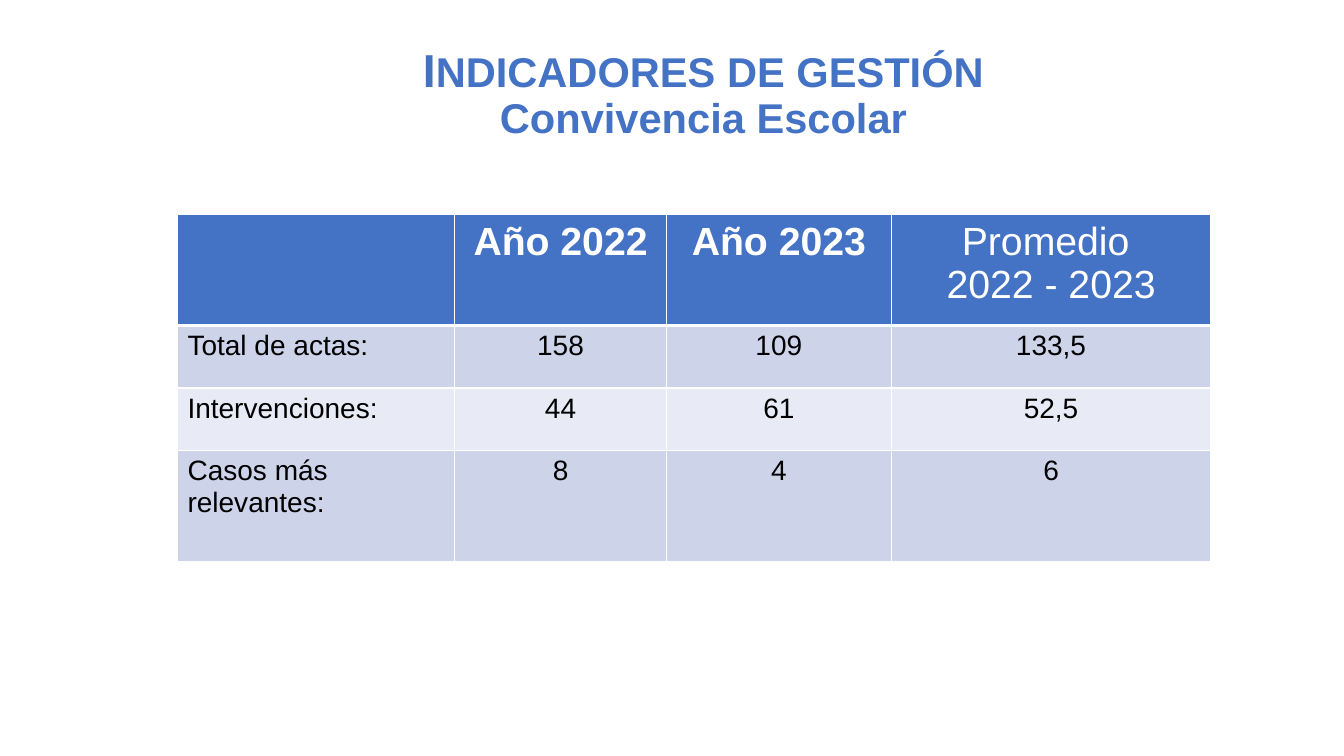
"""Build the school coexistence indicators slide with its yearly table."""
from lxml.etree import SubElement
from pptx import Presentation
from pptx.dml.color import RGBColor
from pptx.enum.text import MSO_ANCHOR, MSO_AUTO_SIZE, PP_ALIGN
from pptx.oxml.ns import qn
from pptx.util import Inches, Pt

FONT = "Arial"
COLORS = {"blue": "4472C4", "white": "FFFFFF", "black": "000000",
          "band_dark": "CDD4EA", "band_light": "E8EBF5"}

TITLE_LINES = [
    [("I", 33), ("NDICADORES DE GESTIÓN", 29.7)],
    [("Convivencia Escolar", 29.7)],
]
TITLE_BOX = (2.48, 0.17, 9, 1.29)

ROWS = [
    ["", "Año 2022", "Año 2023", "Promedio \n2022 - 2023"],
    ["Total de actas:", "158", "109", "133,5"],
    ["Intervenciones:", "44", "61", "52,5"],
    ["Casos más relevantes:", "8", "4", "6"],
]
TABLE_ORIGIN = (1.76, 2.13)
COLUMN_WIDTHS = [2.75, 2.1, 2.23, 3.17]
ROW_HEIGHTS = [1.1, 0.62, 0.62, 1.1]
BOLD_HEADERS = ROWS[0][1:3]


def add_run(paragraph, text, size, color, bold):
    run = paragraph.add_run()
    run.text = text
    run.font.name = FONT
    run.font.size = Pt(size)
    run.font.bold = bold
    run.font.color.rgb = RGBColor.from_string(COLORS[color])


def add_title(slide):
    title = slide.shapes.title
    title.left, title.top, title.width, title.height = map(Inches, TITLE_BOX)
    frame = title.text_frame
    frame.word_wrap = True
    frame.auto_size = MSO_AUTO_SIZE.NONE
    frame.vertical_anchor = MSO_ANCHOR.BOTTOM
    frame.margin_left = frame.margin_right = Inches(0.1)
    frame.margin_top = frame.margin_bottom = Inches(0.05)
    paragraph = frame.paragraphs[0]
    paragraph.alignment = PP_ALIGN.CENTER
    paragraph.line_spacing = 0.9
    for index, line in enumerate(TITLE_LINES):
        if index:
            paragraph.add_line_break()
        for text, size in line:
            add_run(paragraph, text, size, "blue", True)


def set_borders(cell, widths):
    properties = cell._tc.get_or_add_tcPr()
    for side, width in widths.items():
        line = SubElement(properties, qn(f"a:ln{side}"), w=str(Pt(width)))
        fill = SubElement(line, qn("a:solidFill"))
        SubElement(fill, qn("a:srgbClr"), val=COLORS["white"])


def fill_cell(cell, text, row, column):
    header = row == 0
    set_borders(cell, {"L": 1, "R": 1, "T": 3 if row == 1 else 1,
                       "B": 3 if header else 1})
    band = "blue" if header else "band_dark" if row % 2 else "band_light"
    cell.fill.solid()
    cell.fill.fore_color.rgb = RGBColor.from_string(COLORS[band])
    frame = cell.text_frame
    for index, line in enumerate(text.split("\n") if text else []):
        paragraph = frame.add_paragraph() if index else frame.paragraphs[0]
        paragraph.alignment = PP_ALIGN.CENTER if column else PP_ALIGN.LEFT
        add_run(paragraph, line, 28 if header else 20,
                "white" if header else "black", text in BOLD_HEADERS)


def add_indicator_table(slide):
    size = (sum(COLUMN_WIDTHS), sum(ROW_HEIGHTS))
    table = slide.shapes.add_table(
        len(ROWS), len(COLUMN_WIDTHS), *map(Inches, TABLE_ORIGIN + size)).table
    for column, width in zip(table.columns, COLUMN_WIDTHS):
        column.width = Inches(width)
    for row, height in zip(table.rows, ROW_HEIGHTS):
        row.height = Inches(height)
    for row, texts in enumerate(ROWS):
        for column, text in enumerate(texts):
            fill_cell(table.cell(row, column), text, row, column)


def main():
    presentation = Presentation()
    presentation.slide_width = Inches(13.33)
    presentation.slide_height = Inches(7.5)
    slide = presentation.slides.add_slide(presentation.slide_layouts[5])
    add_title(slide)
    add_indicator_table(slide)
    presentation.save("out.pptx")


if __name__ == "__main__":
    main()
